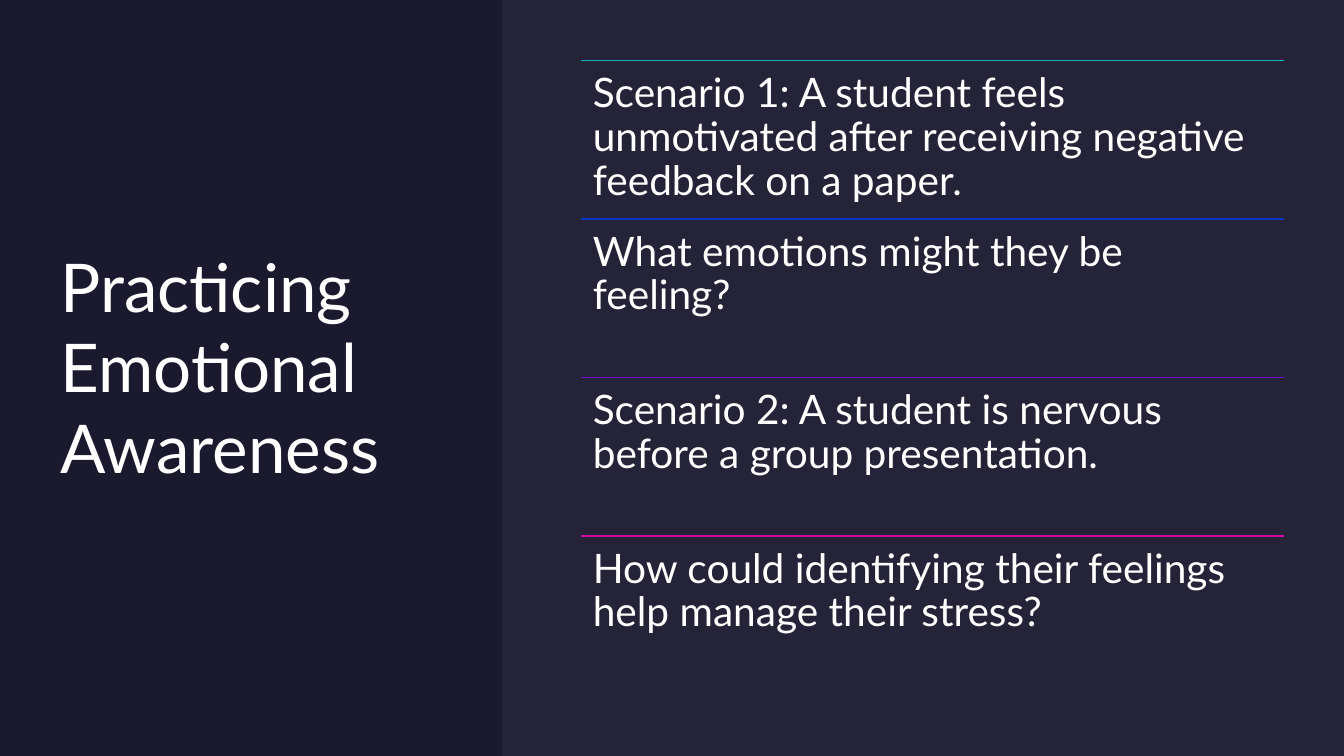
from dataclasses import dataclass

from lxml import etree
from pptx import Presentation
from pptx.dml.color import RGBColor
from pptx.enum.shapes import MSO_CONNECTOR, MSO_SHAPE
from pptx.enum.text import MSO_ANCHOR
from pptx.oxml.ns import qn
from pptx.util import Inches, Pt

RECTANGLE = MSO_SHAPE.RECTANGLE
STRAIGHT = MSO_CONNECTOR.STRAIGHT
TOP = MSO_ANCHOR.TOP
MIDDLE = MSO_ANCHOR.MIDDLE


@dataclass(frozen=True)
class Theme:
    font: str = "Lato"
    background: str = "1B192E"
    panel: str = "E4E3F0"
    panel_opacity: int = 5
    text: str = "FFFFFF"
    rules: tuple = ("12B1BF", "0F35C6", "6E0DCD", "D40AA8")
    title_size: int = 48
    prompt_size: int = 29
    rule_width: int = 1


@dataclass(frozen=True)
class Box:
    left: float
    top: float
    width: float
    height: float

    def inches(self):
        return [Inches(n) for n in (self.left, self.top, self.width, self.height)]


THEME = Theme()
PAGE = Box(0, 0, 13.33, 7.5)
TITLE = Box(0.6, 0.6, 3.9, 6.06)
PANEL = Box(4.98, 0, 8.36, 7.5)
PROMPT_LIST = Box(5.76, 0.6, 6.97, 6.29)
PROMPTS = (
    "Scenario 1: A student feels unmotivated after receiving negative feedback on a paper.",
    "What emotions might they be feeling?",
    "Scenario 2: A student is nervous before a group presentation.",
    "How could identifying their feelings help manage their stress?",
)


def color(value):
    return RGBColor.from_string(value)


def add_panel(slide, box, fill, opacity=100):
    panel = slide.shapes.add_shape(RECTANGLE, *box.inches())
    panel.shadow.inherit = False
    panel.line.fill.background()
    panel.fill.solid()
    panel.fill.fore_color.rgb = color(fill)
    if opacity < 100:
        tint = panel.fill._xPr.find(qn("a:solidFill"))[0]
        etree.SubElement(tint, qn("a:alpha"), val=str(opacity * 1000))


def add_words(slide, box, words, size, inset=0, anchor=TOP):
    frame = slide.shapes.add_textbox(*box.inches()).text_frame
    frame.word_wrap = True
    frame.vertical_anchor = anchor
    frame.margin_left = frame.margin_right = Inches(inset)
    frame.margin_top = frame.margin_bottom = Inches(inset)
    paragraph = frame.paragraphs[0]
    run = paragraph.add_run()
    run.text = words
    run.font.name = THEME.font
    run.font.size = Pt(size)
    run.font.color.rgb = color(THEME.text)
    return paragraph


def add_rule(slide, box, stroke):
    left, top, width, _ = box.inches()
    rule = slide.shapes.add_connector(STRAIGHT, left, top, left + width, top)
    rule.line.color.rgb = color(stroke)
    rule.line.width = Pt(THEME.rule_width)
    etree.SubElement(rule._element.spPr, qn("a:effectLst"))


def add_prompt_list(slide, box, prompts):
    row_height = box.height / len(prompts)
    for index, (prompt, stroke) in enumerate(zip(prompts, THEME.rules)):
        row = Box(box.left, box.top + index * row_height, box.width, row_height)
        add_rule(slide, row, stroke)
        paragraph = add_words(slide, row, prompt, THEME.prompt_size, inset=0.12)
        paragraph.line_spacing = 0.9


def build_slide(deck):
    slide = deck.slides.add_slide(deck.slide_layouts[6])
    slide.background.fill.solid()
    slide.background.fill.fore_color.rgb = color(THEME.background)
    add_panel(slide, PAGE, THEME.background)
    add_words(slide, TITLE, "Practicing Emotional Awareness", THEME.title_size, anchor=MIDDLE)
    add_panel(slide, PANEL, THEME.panel, THEME.panel_opacity)
    add_prompt_list(slide, PROMPT_LIST, PROMPTS)


def main():
    deck = Presentation()
    deck.slide_width = Inches(PAGE.width)
    deck.slide_height = Inches(PAGE.height)
    build_slide(deck)
    deck.save("out.pptx")


if __name__ == "__main__":
    main()
